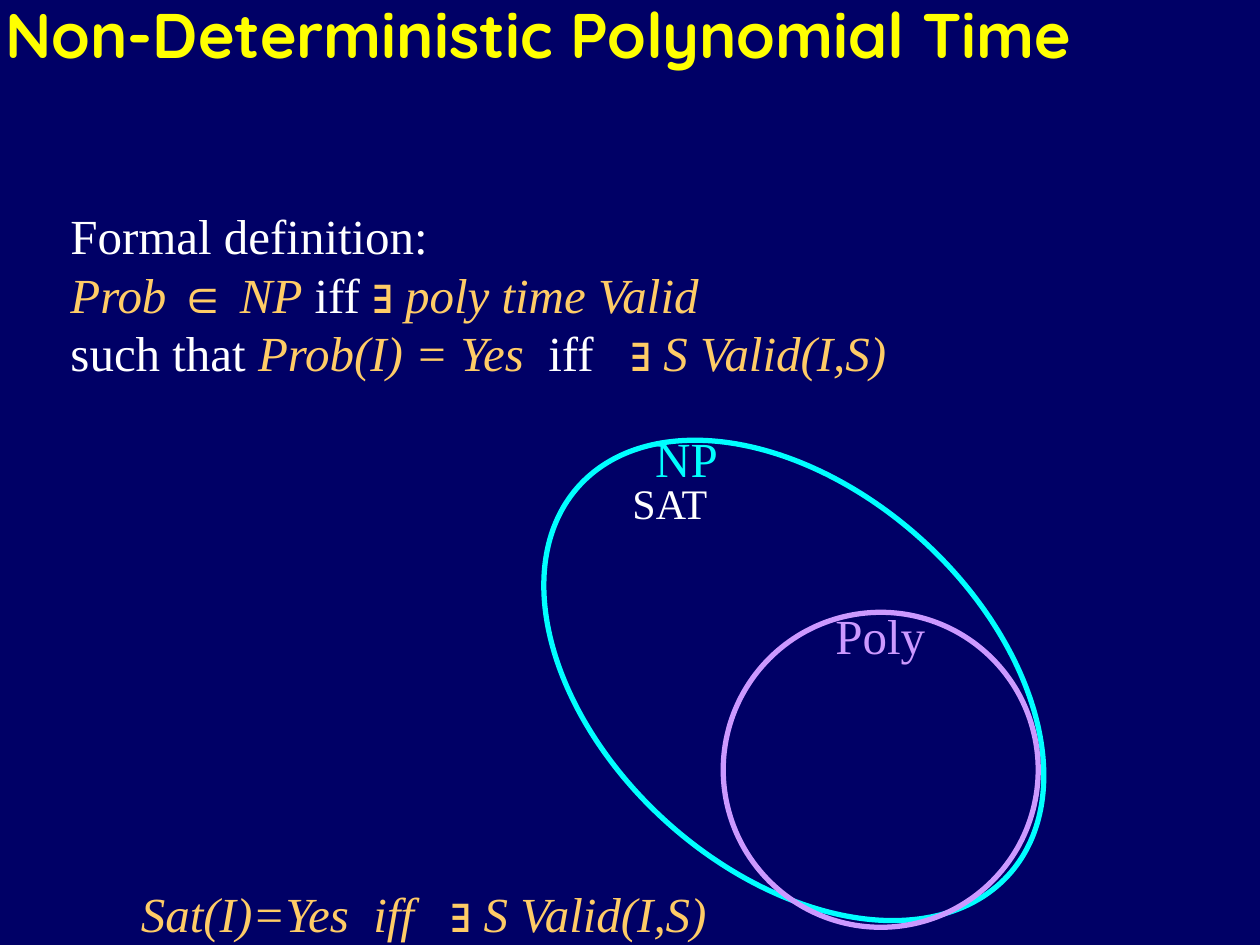
from pptx import Presentation
from pptx.dml.color import RGBColor
from pptx.enum.shapes import MSO_SHAPE
from pptx.enum.text import MSO_ANCHOR, MSO_AUTO_SIZE, PP_ALIGN
from pptx.util import Inches, Pt

# Theme: colours, fonts and type sizes
theme = {
    "back": RGBColor(0x00, 0x00, 0x66),
    "yellow": RGBColor(0xFF, 0xFF, 0x00),
    "white": RGBColor(0xFF, 0xFF, 0xFF),
    "gold": RGBColor(0xFF, 0xCC, 0x66),
    "cyan": RGBColor(0x00, 0xFF, 0xFF),
    "violet": RGBColor(0xCC, 0x99, 0xFF),
    "head": "Quicksand",
    "body": "Times New Roman",
    "math": "Arial",
    "title": Pt(36),
    "text": Pt(28),
    "small": Pt(24),
    "line": Pt(3),
}


def add_text(shapes, box, lines, size="text", pad=0.3):
    """Each line is a list of (text, colour, font) runs; gold runs are italic."""
    frame = shapes.add_textbox(*map(Inches, box)).text_frame
    frame.word_wrap = False
    frame.auto_size = MSO_AUTO_SIZE.SHAPE_TO_FIT_TEXT
    frame.margin_left = frame.margin_right = Inches(pad)
    for i, line in enumerate(lines):
        para = frame.add_paragraph() if i else frame.paragraphs[0]
        para.font.size = theme[size]
        for text, color, face in line:
            run = para.add_run()
            run.text = text
            run.font.name = theme[face]
            run.font.size = theme[size]
            run.font.color.rgb = theme[color]
            run.font.italic = color == "gold"


def add_set(box, turn, color, name, spot):
    """Group an outlined ellipse with its label."""
    group = slide.shapes.add_group_shape()
    oval = group.shapes.add_shape(MSO_SHAPE.OVAL, *map(Inches, box))
    oval.rotation = turn
    oval.shadow.inherit = False
    oval.fill.background()
    oval.line.color.rgb = theme[color]
    oval.line.width = theme["line"]
    add_text(group.shapes, spot, [[(name, color, "body")]])


deck = Presentation()
deck.slide_width, deck.slide_height = Inches(10), Inches(7.5)
slide = deck.slides.add_slide(deck.slide_layouts[5])
slide.background.fill.solid()
slide.background.fill.fore_color.rgb = theme["back"]

# Title
title = slide.shapes.title
title.left, title.top = Inches(-0.06), Inches(-0.36)
title.width, title.height = Inches(9.14), Inches(1.25)
title.text_frame.text = "Non-Deterministic Polynomial Time"
title.text_frame.vertical_anchor = MSO_ANCHOR.MIDDLE
head = title.text_frame.paragraphs[0]
head.alignment = PP_ALIGN.LEFT
head.font.name = theme["head"]
head.font.size = theme["title"]
head.font.bold = True
head.font.color.rgb = theme["yellow"]

# Outer set
add_set((4, 3.89, 4.6, 3.02), 42.1, "cyan", "NP", (4.9, 3.35, 1.12, 0.57))

# Formal definition
exists = ("∃", "gold", "math")
add_text(slide.shapes, (0.26, 1.58, 7.24, 1.51), [
    [("Formal definition:", "white", "body")],
    [("Prob ", "gold", "body"), ("∈", "gold", "math"),
     (" NP", "gold", "body"), (" iff ", "white", "body"),
     exists, (" poly time Valid", "gold", "body")],
    [("such that ", "white", "body"), ("Prob(I) = Yes  ", "gold", "body"),
     ("iff   ", "white", "body"), exists, (" S Valid(I,S)", "gold", "body")],
])

# Member of the outer set
add_text(slide.shapes, (4.72, 3.74, 1.23, 0.5),
         [[("SAT", "white", "body")]], "small")

# Inner set
add_set((5.74, 4.86, 2.5, 2.5), 0, "violet", "Poly", (6.33, 4.76, 1.35, 0.57))

# Example
add_text(slide.shapes, (1.02, 6.96, 4.79, 0.57),
         [[("Sat(I)=Yes  iff   ∃ S Valid(I,S)", "gold", "body")]], pad=0.1)

deck.save("out.pptx")
